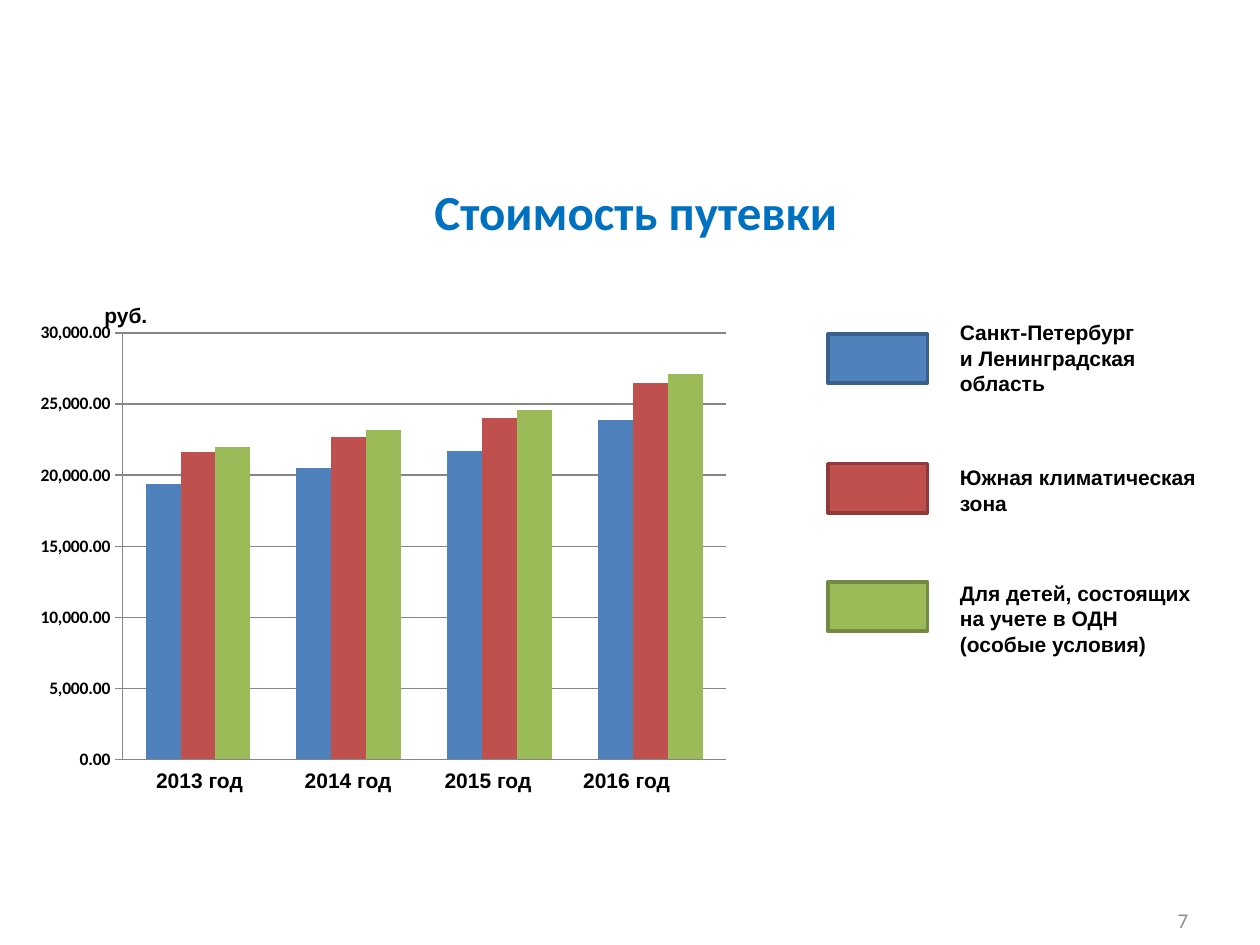
from lxml.etree import SubElement
from pptx import Presentation
from pptx.chart.data import CategoryChartData
from pptx.dml.color import RGBColor
from pptx.enum.chart import XL_CHART_TYPE, XL_TICK_MARK
from pptx.enum.shapes import MSO_SHAPE
from pptx.enum.text import MSO_ANCHOR, MSO_AUTO_SIZE, PP_ALIGN
from pptx.oxml.ns import qn
from pptx.util import Inches, Pt

BLACK = RGBColor(0x00, 0x00, 0x00)
GRAY = RGBColor(0x8C, 0x8C, 0x8C)
AXIS_GRAY = RGBColor(0x86, 0x86, 0x86)
TITLE_BLUE = RGBColor(0x00, 0x70, 0xC0)
BLUE = RGBColor(0x4F, 0x81, 0xBD)
RED = RGBColor(0xC0, 0x50, 0x4D)
GREEN = RGBColor(0x9B, 0xBB, 0x59)
DARK_BLUE = RGBColor(0x3A, 0x5F, 0x8C)
DARK_RED = RGBColor(0x8E, 0x3B, 0x39)
DARK_GREEN = RGBColor(0x73, 0x8A, 0x42)

COLUMNS, ROWS = 100, 75
PRICES = [
    ("Series 1", [19400, 20500, 21700, 23900], BLUE),
    ("Series 2", [21600, 22700, 24000, 26500], RED),
    ("Series 3", [22000, 23200, 24600, 27100], GREEN),
]
YEARS = [("2013 год", 11.4), ("2014 год", 23.2), ("2015 год", 34.3), ("2016 год", 45.3)]
LEGEND = [
    (BLUE, DARK_BLUE, 26.5, 24.9, 7.1, ["Санкт-Петербург\nи Ленинградская область"]),
    (RED, DARK_RED, 36.8, 36.4, 5.1, ["Южная климатическая зона"]),
    (GREEN, DARK_GREEN, 46.2, 45.6, 7.1,
     ["Для детей, состоящих на учете в ОДН", "(особые условия)"]),
]


class SlideBuilder:
    """Draws elements on one slide, placed on a grid of columns and rows."""

    def __init__(self, presentation):
        self.slide = presentation.slides.add_slide(presentation.slide_layouts[6])
        self.column = presentation.slide_width / COLUMNS
        self.row = presentation.slide_height / ROWS

    def place(self, left, top, width, height):
        """Turn grid units into slide lengths."""
        return (round(left * self.column), round(top * self.row),
                round(width * self.column), round(height * self.row))

    def text(self, box, paragraphs, size=12, font="Arial", color=BLACK, bold=True,
             align=PP_ALIGN.LEFT, anchor=MSO_ANCHOR.TOP, grow=True):
        """Add a wrapped text box."""
        frame = self.slide.shapes.add_textbox(*self.place(*box)).text_frame
        frame.word_wrap = True
        frame.vertical_anchor = anchor
        frame.auto_size = MSO_AUTO_SIZE.SHAPE_TO_FIT_TEXT if grow else MSO_AUTO_SIZE.NONE
        for index, content in enumerate(paragraphs):
            paragraph = frame.add_paragraph() if index else frame.paragraphs[0]
            paragraph.text = content
            paragraph.alignment = align
            paragraph.font.size = Pt(size)
            paragraph.font.name = font
            paragraph.font.bold = bold
            paragraph.font.color.rgb = color

    def swatch(self, box, fill, line):
        """Add an outlined legend rectangle."""
        shape = self.slide.shapes.add_shape(MSO_SHAPE.RECTANGLE, *self.place(*box))
        shape.shadow.inherit = False
        shape.fill.solid()
        shape.fill.fore_color.rgb = fill
        shape.line.color.rgb = line
        shape.line.width = Pt(2)

    def column_chart(self, box, categories, series, plot_area):
        """Add a clustered column chart with a fixed inner plot area."""
        data = CategoryChartData(number_format="#,##0.00")
        data.categories = categories
        for name, values, _ in series:
            data.add_series(name, values)
        chart = self.slide.shapes.add_chart(
            XL_CHART_TYPE.COLUMN_CLUSTERED, *self.place(*box), data).chart
        chart.has_legend = False
        chart.has_title = False
        chart.font.size = Pt(10)
        chart.font.name = "Calibri"
        chart.font.color.rgb = BLACK
        chart.category_axis.visible = False
        axis = chart.value_axis
        axis.minimum_scale, axis.maximum_scale, axis.major_unit = 0, 30000, 5000
        axis.major_tick_mark = XL_TICK_MARK.OUTSIDE
        axis.has_major_gridlines = True
        axis.tick_labels.font.bold = True
        axis.tick_labels.font.size = Pt(10)
        axis.tick_labels.number_format = "#,##0.00"
        axis.tick_labels.number_format_is_linked = False
        for line in (axis.format.line, axis.major_gridlines.format.line):
            line.color.rgb = AXIS_GRAY
            line.width = Pt(0.75)
        plot = chart.plots[0]
        plot.gap_width = 132
        plot.overlap = 0
        plot.vary_by_categories = False
        for drawn, (_, _, color) in zip(plot.series, series):
            drawn.format.fill.solid()
            drawn.format.fill.fore_color.rgb = color
        self.fix_plot_area(chart, plot_area)

    def fix_plot_area(self, chart, shares):
        """Set the inner plot area as shares of the chart's size."""
        area = chart.element.find(".//" + qn("c:plotArea"))
        layout = area.find(qn("c:layout"))
        if layout is None:
            layout = SubElement(area, qn("c:layout"))
            area.insert(0, layout)
        manual = SubElement(layout, qn("c:manualLayout"))
        settings = [("layoutTarget", "inner"), ("xMode", "edge"), ("yMode", "edge")]
        for tag, value in settings + list(zip("xywh", shares)):
            SubElement(manual, qn("c:" + tag)).set("val", str(value))


def main():
    """Build and save the slide."""
    presentation = Presentation()
    presentation.slide_width, presentation.slide_height = Inches(10), Inches(7.5)
    builder = SlideBuilder(presentation)
    builder.text((72, 71, 23.3, 4), ["7"], font="Calibri", color=GRAY, bold=False,
                 align=PP_ALIGN.RIGHT, anchor=MSO_ANCHOR.MIDDLE, grow=False)
    builder.text((7.5, 13.9, 85.9, 7.1), ["Стоимость путевки"], size=28, font="Calibri",
                 color=TITLE_BLUE, align=PP_ALIGN.CENTER, grow=False)
    builder.column_chart((2.8, 24.1, 63, 38.9), ["1", "2", "3", "4"], PRICES,
                         (0.11, 0.06, 0.76, 0.87))
    for year, left in YEARS:
        builder.text((left, 60.4, 10.2, 3), [year])
    builder.text((7.3, 23.5, 6.6, 3), ["руб."])
    for fill, line, swatch_top, text_top, height, label in LEGEND:
        builder.swatch((65.7, swatch_top, 7.9, 3.9), fill, line)
        builder.text((75.2, text_top, 21.3, height), label)
    presentation.save("out.pptx")


if __name__ == "__main__":
    main()
